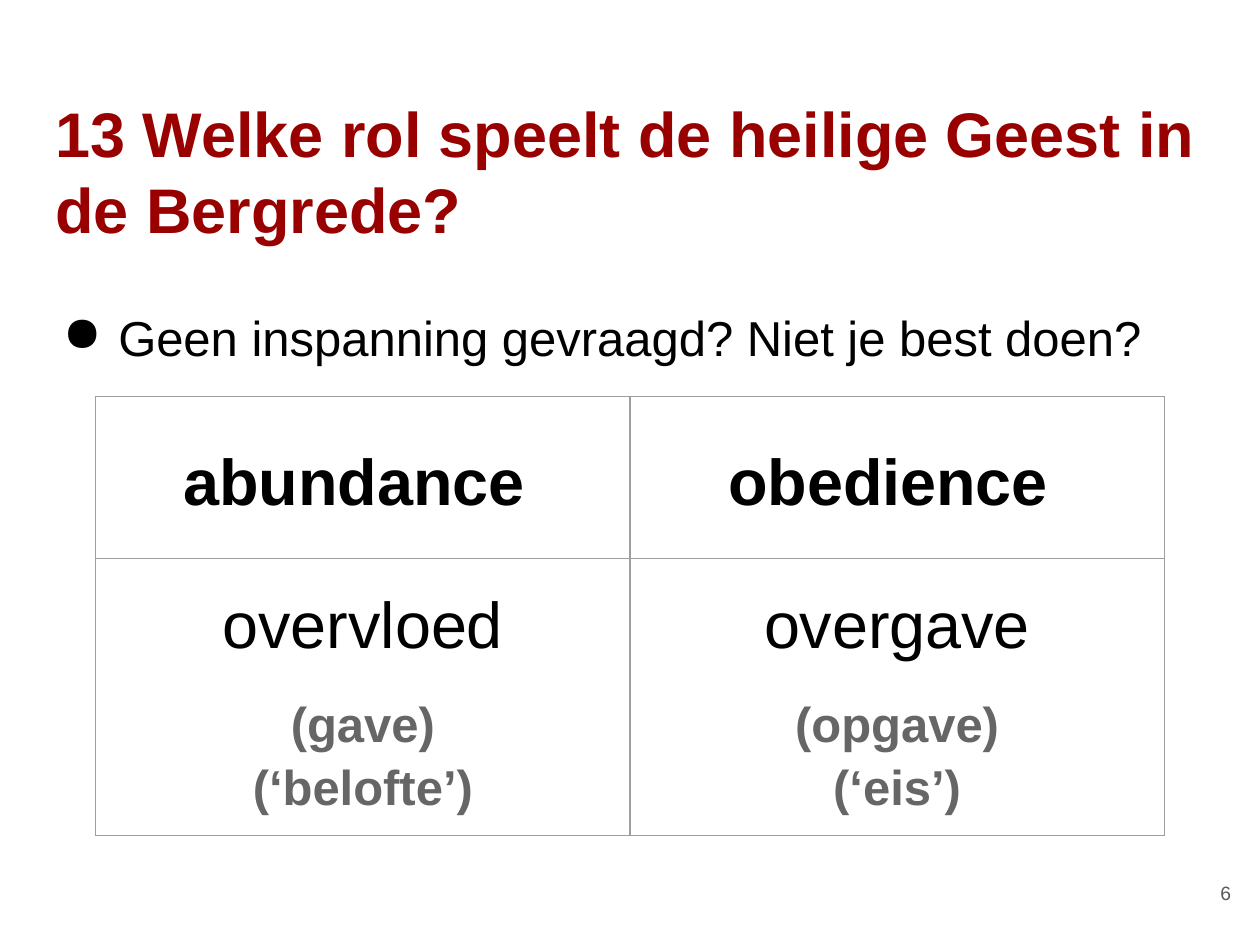
from lxml import etree
from pptx import Presentation
from pptx.dml.color import RGBColor
from pptx.enum.text import MSO_ANCHOR, PP_ALIGN
from pptx.oxml.ns import qn
from pptx.util import Inches, Pt

CENTER, RIGHT = PP_ALIGN.CENTER, PP_ALIGN.RIGHT
TOP, MIDDLE = MSO_ANCHOR.TOP, MSO_ANCHOR.MIDDLE

COLORS = {
    "title": "990000",
    "text": "000000",
    "gray": "666666",
    "number": "595959",
    "border": "9E9E9E",
}
FONT = "Arial"
PAD = Inches(0.1)

HEADS = ["abundance ", "obedience "]
BODIES = [
    ("overvloed", "(gave)\n(‘belofte’)"),
    ("overgave", "(opgave)\n(‘eis’)"),
]


def style(para, text, size, color, bold=False, align=None):
    para.text = text
    para.alignment = align
    font = para.font
    font.name, font.size, font.bold = FONT, Pt(size), bold
    font.color.rgb = RGBColor.from_string(COLORS[color])


def space(para, before=0, after=0):
    para.line_spacing = 1.15
    para.space_before, para.space_after = Pt(before), Pt(after)


def add_text(slide, box, text, size, color, bold=False, align=None, anchor=TOP):
    frame = slide.shapes.add_textbox(*map(Inches, box)).text_frame
    frame.word_wrap = True
    frame.vertical_anchor = anchor
    frame.margin_left = frame.margin_right = PAD
    frame.margin_top = frame.margin_bottom = PAD
    para = frame.paragraphs[0]
    style(para, text, size, color, bold, align)
    return para


def add_bullet(para, char):
    props = para._p.get_or_add_pPr()
    props.set("marL", str(Inches(0.5)))
    props.set("indent", str(Inches(-0.44)))
    bullet = etree.Element(qn("a:buChar"), char=char)
    # The bullet must stand before the default run properties
    props.find(qn("a:defRPr")).addprevious(bullet)


def set_cell(cell):
    cell.vertical_anchor = MIDDLE
    cell.margin_left = cell.margin_right = PAD
    cell.margin_top = cell.margin_bottom = PAD
    cell.fill.background()
    props = cell._tc.get_or_add_tcPr()
    for i, side in enumerate(("lnL", "lnR", "lnT", "lnB")):
        line = etree.Element(qn(f"a:{side}"), w=str(Pt(0.75)))
        fill = etree.SubElement(line, qn("a:solidFill"))
        etree.SubElement(fill, qn("a:srgbClr"), val=COLORS["border"])
        props.insert(i, line)


def add_grid(slide):
    box = map(Inches, (0.76, 3.15, 8.48, 2.94))
    table = slide.shapes.add_table(2, 2, *box).table
    table.first_row = table.horz_banding = False
    for row, height in zip(table.rows, (1.28, 1.66)):
        row.height = Inches(height)
    for cell in table.iter_cells():
        set_cell(cell)

    for col, (head, (word, note)) in enumerate(zip(HEADS, BODIES)):
        para = table.cell(0, col).text_frame.paragraphs[0]
        style(para, head, 37, "text", True, CENTER)
        space(para, after=16)

        frame = table.cell(1, col).text_frame
        para = frame.paragraphs[0]
        style(para, word, 37, "text", False, CENTER)
        space(para)
        para = frame.add_paragraph()
        style(para, note, 28, "gray", True, CENTER)
        space(para, 16, 16)


def main():
    deck = Presentation()
    deck.slide_width, deck.slide_height = Inches(10), Inches(7.5)
    slide = deck.slides.add_slide(deck.slide_layouts[6])

    # Title
    add_text(slide, (0.34, 0.65, 9.32, 0.83),
             "13 Welke rol speelt de heilige Geest in de Bergrede?",
             36, "title", bold=True)

    # Slide number
    add_text(slide, (9.27, 6.8, 0.6, 0.57), "6", 11, "number",
             align=RIGHT, anchor=MIDDLE)

    # Question
    para = add_text(slide, (0.34, 2.27, 9.32, 4.98),
                    "Geen inspanning gevraagd? Niet je best doen?", 28, "text")
    space(para)
    add_bullet(para, "●")

    # Comparison table
    add_grid(slide)

    deck.save("out.pptx")


if __name__ == "__main__":
    main()
